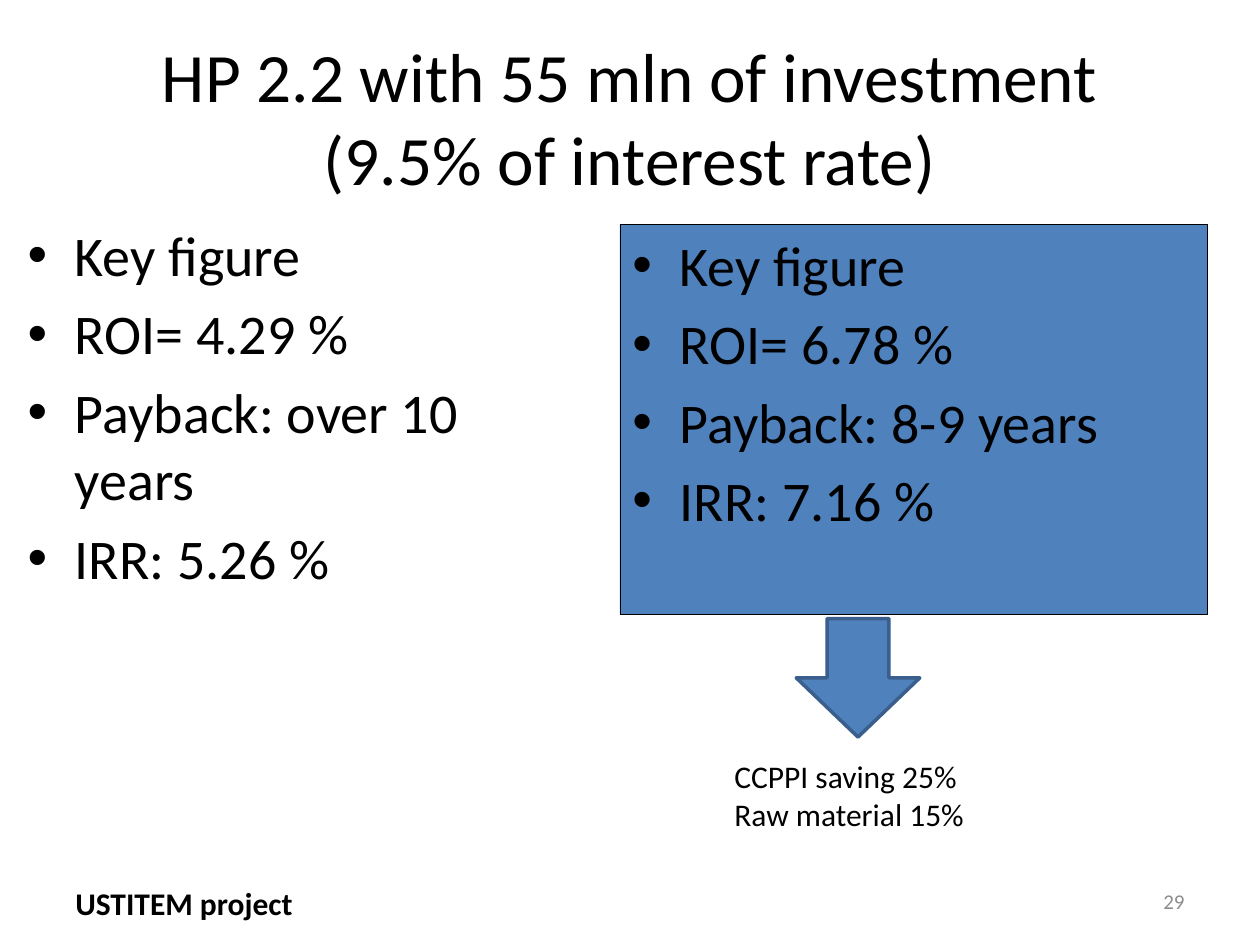
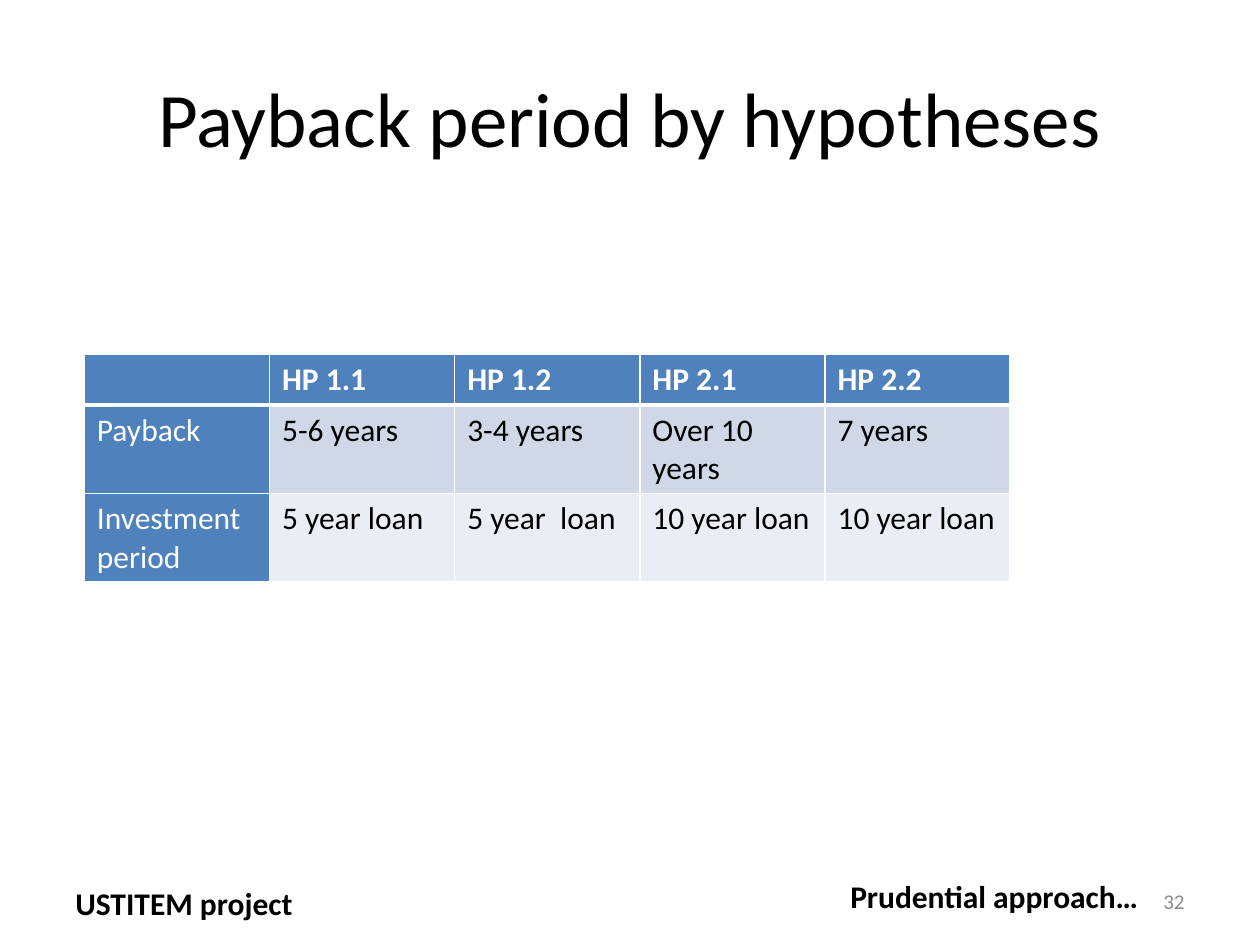
import pptx
import pptx.dml.color
import pptx.enum.shapes
import pptx.enum.text
import pptx.oxml
import pptx.oxml.ns
import pptx.util

Pt = pptx.util.Pt
ALIGN = pptx.enum.text.PP_ALIGN
ANCHOR = pptx.enum.text.MSO_ANCHOR
SHAPES = pptx.enum.shapes.MSO_SHAPE

FONT = "Calibri"
BLACK, WHITE, GREY = "000000", "FFFFFF", "8C8C8C"
BLUE, DARK_BLUE = "4F81BD", "3A5F8C"
BAND_FILLS = ["D0D8E8", "E9EDF4"]
BULLET_INDENT = 27
TITLE_BOX = (36, 21.6, 648, 90)
LAYOUT_CONTENT, LAYOUT_TITLE_ONLY = 1, 5


def rgb(value):
    return pptx.dml.color.RGBColor.from_string(value)


def place(shape, box):
    for name, value in zip(("left", "top", "width", "height"), box):
        setattr(shape, name, Pt(value))


def xml_element(tag, attributes="", content=""):
    namespace = pptx.oxml.ns.nsdecls("a")
    return pptx.oxml.parse_xml(f"<a:{tag} {namespace} {attributes}>{content}</a:{tag}>")


def write_lines(frame, lines, size, color=BLACK, bold=False, align=ALIGN.LEFT, bullets=False):
    """Fill a text frame with one paragraph per line."""
    for index, line in enumerate(lines):
        paragraph = frame.paragraphs[0] if index == 0 else frame.add_paragraph()
        paragraph.alignment = align
        if bullets:
            add_bullet(paragraph, 0 if index == 0 else size * 0.2)
        run = paragraph.add_run()
        run.text = line
        for name, value in {"name": FONT, "size": Pt(size), "bold": bold}.items():
            setattr(run.font, name, value)
        run.font.color.rgb = rgb(color)


def add_bullet(paragraph, space_before):
    paragraph.space_before = Pt(space_before)
    properties = paragraph._p.get_or_add_pPr()
    properties.set("marL", str(Pt(BULLET_INDENT)))
    properties.set("indent", str(-Pt(BULLET_INDENT)))
    properties.append(xml_element("buFont", 'typeface="Arial"'))
    properties.append(xml_element("buChar", 'char="•"'))


def add_label(slide, box, lines, size=18, wrap=False, anchor=ANCHOR.TOP, **style):
    label = slide.shapes.add_textbox(*map(Pt, box))
    label.text_frame.word_wrap = wrap
    label.text_frame.vertical_anchor = anchor
    write_lines(label.text_frame, lines, size, **style)


def add_filled_shape(slide, kind, box, line_color, line_width):
    shape = slide.shapes.add_shape(kind, *map(Pt, box))
    shape.shadow.inherit = False
    shape.fill.solid()
    shape.fill.fore_color.rgb = rgb(BLUE)
    shape.line.color.rgb = rgb(line_color)
    shape.line.width = Pt(line_width)
    return shape


def fill_placeholder(placeholder, box, lines, size, **style):
    place(placeholder, box)
    placeholder.text_frame.auto_size = pptx.enum.text.MSO_AUTO_SIZE.NONE
    write_lines(placeholder.text_frame, lines, size, **style)


def add_slide(presentation, layout, title, title_size, number):
    """Add a slide with its title, project footer and page number."""
    slide = presentation.slides.add_slide(presentation.slide_layouts[layout])
    fill_placeholder(slide.shapes.title, TITLE_BOX, [title], title_size, align=ALIGN.CENTER)
    slide.shapes.title.text_frame.vertical_anchor = ANCHOR.MIDDLE
    add_label(slide, (36, 501.8, 144, 29), ["USTITEM project"], bold=True)
    add_label(slide, (516, 500.5, 168, 28.8), [str(number)], 12, wrap=True,
              anchor=ANCHOR.MIDDLE, color=GREY, align=ALIGN.RIGHT)
    return slide


def set_borders(cell, widths):
    """Draw white borders; widths maps a side (L, R, T, B) to points."""
    properties = cell._tc.get_or_add_tcPr()
    for index, side in enumerate("LRTB"):
        content = f'<a:solidFill><a:srgbClr val="{WHITE}"/></a:solidFill>'
        line = xml_element(f"ln{side}", f'w="{Pt(widths[side])}"', content)
        properties.insert(index, line)


def add_payback_table(slide, rows, left, top, column_width, row_height):
    row_count, column_count = len(rows), len(rows[0])
    frame = slide.shapes.add_table(row_count, column_count, Pt(left), Pt(top),
                                   Pt(column_width * column_count), Pt(row_height * row_count))
    table = frame.table
    for column in table.columns:
        column.width = Pt(column_width)
    for row_index, values in enumerate(rows):
        table.rows[row_index].height = Pt(row_height)
        for column_index, value in enumerate(values):
            cell = table.cell(row_index, column_index)
            is_header = row_index == 0
            is_blue = is_header or column_index == 0
            cell.fill.solid()
            cell.fill.fore_color.rgb = rgb(BLUE if is_blue else BAND_FILLS[row_index - 1])
            set_borders(cell, {"L": 1, "R": 1, "T": 3 if row_index == 1 else 1,
                               "B": 3 if is_header else 1})
            if value:
                write_lines(cell.text_frame, [value], 18, bold=is_header,
                            color=WHITE if is_blue else BLACK)


def build_investment_slide(presentation):
    slide = add_slide(presentation, LAYOUT_CONTENT,
                      "HP 2.2 with 55 mln of investment (9.5% of interest rate)", 39.6, 29)
    fill_placeholder(slide.placeholders[1], (8.6, 122.4, 335.5, 223.2),
                     ["Key figure", "ROI= 4.29 %", "Payback: over 10 years", "IRR: 5.26 %"],
                     32, bullets=True)
    savings_case = add_filled_shape(slide, SHAPES.RECTANGLE, (354.3, 128.2, 335.5, 223.2),
                                    BLACK, 0.5)
    savings_case.text_frame.vertical_anchor = ANCHOR.TOP
    write_lines(savings_case.text_frame,
                ["Key figure", "ROI= 6.78 %", "Payback: 8-9 years", "IRR: 7.16 %"],
                32, bullets=True)
    add_filled_shape(slide, SHAPES.DOWN_ARROW, (455, 353.5, 70.6, 67.7), DARK_BLUE, 2)
    add_label(slide, (412.6, 429.1, 146.9, 51.1), ["CCPPI saving 25%", "Raw material 15%"])


def build_payback_slide(presentation):
    slide = add_slide(presentation, LAYOUT_TITLE_ONLY, "Payback period by hypotheses", 44, 32)
    add_payback_table(slide, [
        ["", "HP 1.1", "HP 1.2", "HP 2.1", "HP 2.2"],
        ["Payback", "5-6 years", "3-4 years", "Over 10 years", "7 years"],
        ["Investment period", "5 year loan", "5 year  loan", "10 year loan", "10 year loan"],
    ], left=48.2, top=202.3, column_width=105.84, row_height=29.2)
    add_label(slide, (478.8, 497.5, 182.2, 29), ["Prudential approach…"], bold=True)


def main():
    presentation = pptx.Presentation()
    presentation.slide_width, presentation.slide_height = Pt(720), Pt(540)
    build_investment_slide(presentation)
    build_payback_slide(presentation)
    presentation.save("out.pptx")


if __name__ == "__main__":
    main()
